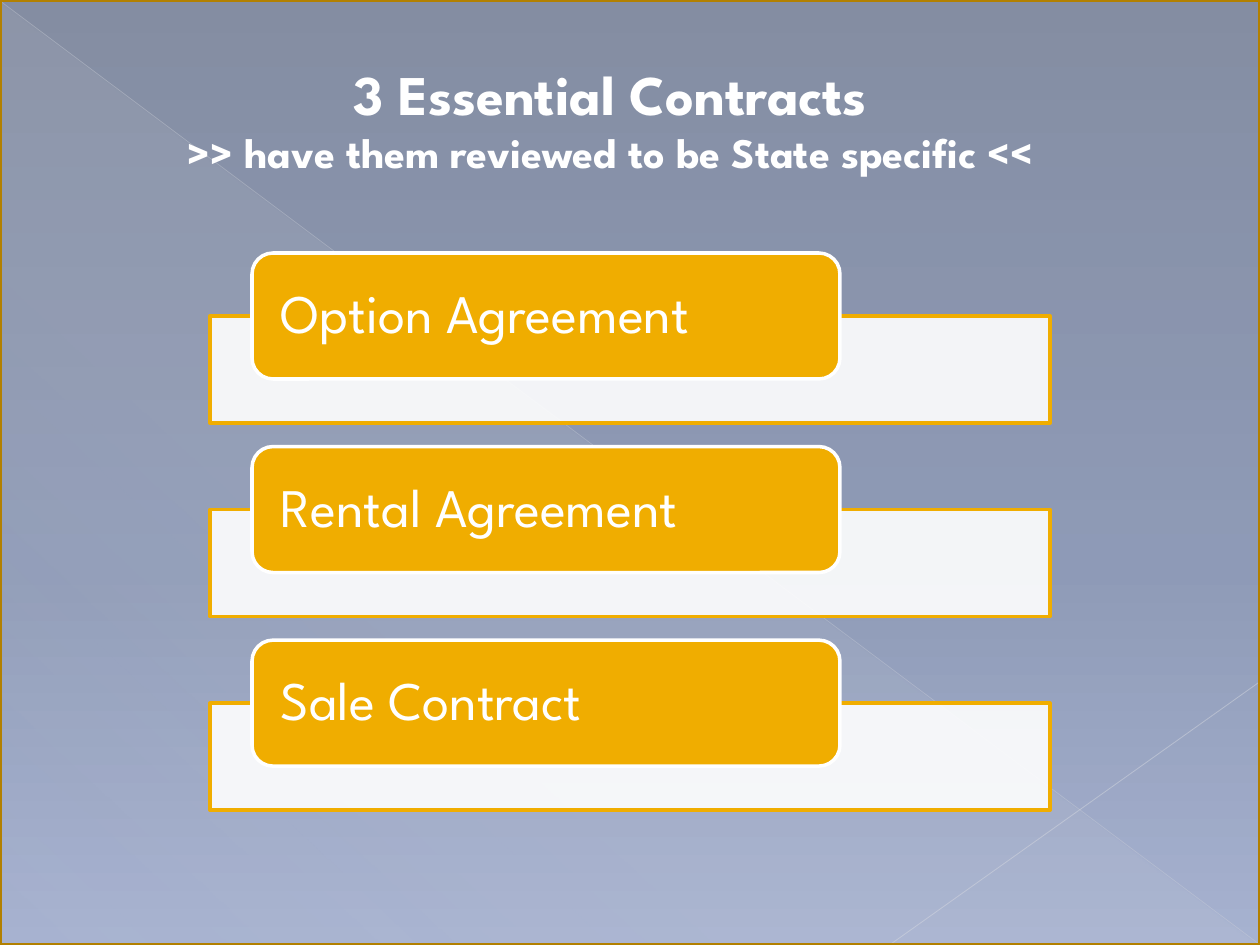
from lxml import etree
from pptx import Presentation
from pptx.dml.color import RGBColor
from pptx.enum.shapes import MSO_CONNECTOR as Connector, MSO_SHAPE as Shape
from pptx.enum.text import MSO_ANCHOR as Anchor, MSO_AUTO_SIZE as AutoSize, PP_ALIGN as Align
from pptx.oxml.ns import qn
from pptx.util import Pt

FONT = "League Spartan"
WIDTH, HEIGHT = 720, 540
COLORS = {
    "white": "FFFFFF", "gold": "F0AD00", "frame": "B28000",
    "sky_top": "334265", "sky_middle": "445887", "sky_bottom": "6C7FB1",
    "sheen": "D4D4D6", "diagonal": "B9BDC8", "corner": "C1C4CE",
}
CONTRACTS = ["Option Agreement", "Rental Agreement", "Sale Contract"]


def color(name):
    return RGBColor.from_string(COLORS[name])


def set_alpha(solid_fill, percent):
    etree.SubElement(solid_fill[0], qn("a:alpha"), val=str(percent * 1000))


def set_gradient(properties, stops, angle):
    """Replace the solid fill by stops of (position, color name, opacity)."""
    gradient = etree.Element(qn("a:gradFill"), rotWithShape="1")
    stop_list = etree.SubElement(gradient, qn("a:gsLst"))
    for position, name, opacity in stops:
        stop = etree.SubElement(stop_list, qn("a:gs"), pos=str(position * 1000))
        etree.SubElement(stop, qn("a:srgbClr"), val=COLORS[name])
        if opacity < 100:
            set_alpha(stop, opacity)
    etree.SubElement(gradient, qn("a:lin"), ang=str(angle * 60000), scaled="0")
    properties.replace(properties.find(qn("a:solidFill")), gradient)


def add_box(slide, kind, box, fill, line=None, opacity=100):
    shape = slide.shapes.add_shape(kind, *map(Pt, box))
    shape.shadow.inherit = False
    shape.fill.solid()
    shape.fill.fore_color.rgb = color(fill)
    if opacity < 100:
        set_alpha(shape.element.spPr.find(qn("a:solidFill")), opacity)
    if line:
        shape.line.color.rgb = color(line)
        shape.line.width = Pt(2)
    else:
        shape.line.fill.background()
    return shape


def add_line(slide, start, end, name, width, opacity):
    line = slide.shapes.add_connector(Connector.STRAIGHT, *map(Pt, start + end))
    line.line.color.rgb = color(name)
    line.line.width = Pt(width)
    properties = line.element.spPr
    set_alpha(properties.find(qn("a:ln")).find(qn("a:solidFill")), opacity)
    etree.SubElement(properties, qn("a:effectLst"))


def write(paragraph, text, size, bold=False, align=Align.LEFT, spacing=1.0):
    paragraph.alignment = align
    paragraph.line_spacing = spacing
    run = paragraph.add_run()
    run.text = text
    run.font.name = FONT
    run.font.size = Pt(size)
    run.font.bold = bold
    run.font.color.rgb = color("white")


def add_backdrop(slide, box):
    left, top, width, height = box
    right, bottom = left + width, top + height

    # Sky gradient
    slide.background.fill.solid()
    set_gradient(slide.element.find(".//" + qn("p:bgPr")),
                 [(0, "sky_top", 100), (60, "sky_middle", 100), (100, "sky_bottom", 100)], 90)

    # Sheen and thin diagonals
    sheen = add_box(slide, Shape.RIGHT_TRIANGLE, (left + 0.5, top + 1, width - 1, height - 1), "sheen")
    set_gradient(sheen.element.spPr, [(0, "sheen", 10), (70, "sheen", 8), (100, "sheen", 1)], 133)
    add_line(slide, (left, top + 0.5), (right - 0.5, bottom - 0.5), "diagonal", 0.39, 35)
    add_line(slide, (right, top + 389.5), (left + 509, bottom - 0.5), "corner", 0.47, 45)

    # Pale veil with gold frame
    add_box(slide, Shape.RECTANGLE, box, "white", "frame", opacity=40)


def add_contract(slide, box, name):
    left, top, width, height = box
    tab_height = 72
    bar_top = top + tab_height / 2
    add_box(slide, Shape.RECTANGLE, (left, bar_top, width, top + height - bar_top),
            "white", "gold", opacity=90)
    tab = add_box(slide, Shape.ROUNDED_RECTANGLE,
                  (left + width * 0.05, top, width * 0.7, tab_height), "gold", "white")
    frame = tab.text_frame
    frame.word_wrap = True
    frame.vertical_anchor = Anchor.MIDDLE
    frame.margin_left = frame.margin_right = Pt(13)
    frame.margin_top = frame.margin_bottom = 0
    write(frame.paragraphs[0], name, 31, spacing=0.9)


def add_contract_list(slide, box):
    left, top, width, height = box
    gap = 13.4
    row_height = (height - gap * (len(CONTRACTS) - 1)) / len(CONTRACTS)
    for index, name in enumerate(CONTRACTS):
        row_top = top + index * (row_height + gap)
        add_contract(slide, (left, row_top, width, row_height), name)


def add_title(slide, box):
    title = slide.shapes.title
    title.left, title.top, title.width, title.height = map(Pt, box)
    slide.shapes.element.append(title.element)  # in front of the veil
    frame = title.text_frame
    frame.word_wrap = True
    frame.auto_size = AutoSize.NONE
    frame.vertical_anchor = Anchor.TOP
    write(frame.paragraphs[0], "3 Essential Contracts", 32, bold=True, align=Align.CENTER)
    write(frame.add_paragraph(), ">> have them reviewed to be State specific <<", 24,
          bold=True, align=Align.CENTER)


def main():
    presentation = Presentation()
    presentation.slide_width, presentation.slide_height = Pt(WIDTH), Pt(HEIGHT)
    slide = presentation.slides.add_slide(presentation.slide_layouts[5])
    add_backdrop(slide, (0, 0, WIDTH, HEIGHT))
    add_contract_list(slide, (120, 144.6, 480, 318.4))
    add_title(slide, (68.4, 30.2, 560.9, 74.9))
    presentation.save("out.pptx")


if __name__ == "__main__":
    main()
